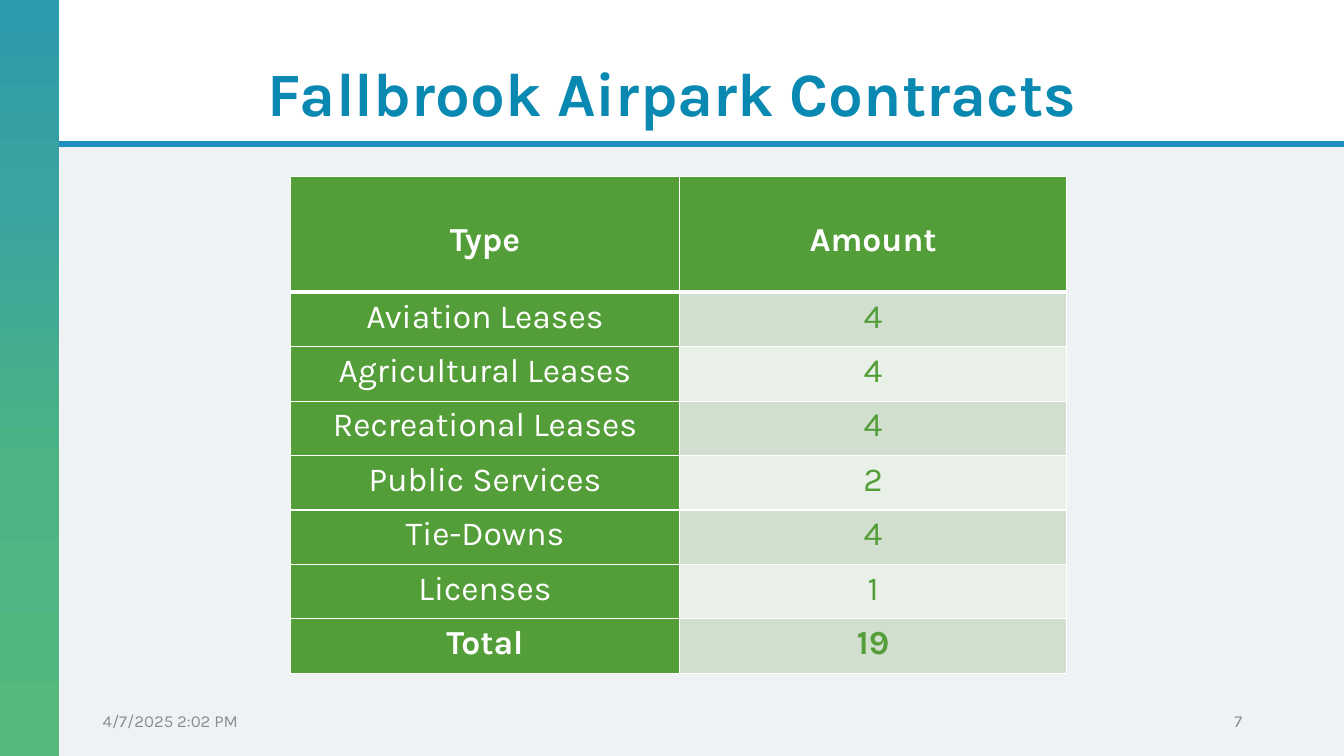
"""Build the Fallbrook Airpark Contracts slide."""
from copy import deepcopy
from typing import NamedTuple

from lxml import etree
from pptx import Presentation
from pptx import util as u
from pptx.dml.color import RGBColor
from pptx.enum import shapes, text
from pptx.oxml import ns

FONT = "Karla"
WHITE = RGBColor(0xFF, 0xFF, 0xFF)
PANEL = RGBColor(0xEF, 0xF2, 0xF5)
RULE = RGBColor(0x1D, 0x90, 0xBF)
TITLE = RGBColor(0x09, 0x89, 0xB1)
FOOTER = RGBColor(0x8C, 0x8C, 0x8C)
GREEN = RGBColor(0x54, 0x9E, 0x39)
BANDS = (RGBColor(0xD1, 0xDF, 0xCE), RGBColor(0xE9, 0xF0, 0xE8))
SIDEBAR_STOPS = (
    (0, RGBColor(0x2C, 0x9B, 0xAD)),
    (0.26, RGBColor(0x39, 0xA3, 0x9F)),
    (0.62, RGBColor(0x4D, 0xB3, 0x84)),
    (1, RGBColor(0x55, 0xB9, 0x7D)),
)


class Label(NamedTuple):
    """A line of text in its own box."""
    words: str
    left: float
    top: float
    width: float
    height: float
    size: int
    color: RGBColor
    align: text.PP_ALIGN
    bold: bool = False


class Contract(NamedTuple):
    """A table row: contract type and its amount."""
    kind: str
    amount: str
    bold: bool = False


LABELS = (
    Label("Fallbrook Airpark Contracts", 0.92, 0.4, 11.5, 1.03, 44, TITLE,
          text.PP_ALIGN.CENTER, True),
    Label("4/7/2025 2:02 PM", 0.92, 6.95, 3, 0.4, 12, FOOTER, text.PP_ALIGN.LEFT),
    Label("7", 9.42, 6.95, 3, 0.4, 12, FOOTER, text.PP_ALIGN.RIGHT),
)
CONTRACTS = (
    Contract("Type", "Amount", True),
    Contract("Aviation Leases", "4"),
    Contract("Agricultural Leases", "4"),
    Contract("Recreational Leases", "4"),
    Contract("Public Services", "2"),
    Contract("Tie-Downs", "4"),
    Contract("Licenses", "1"),
    Contract("Total", "19", True),
)


def write(frame, words: str, size: int, color: RGBColor, align: text.PP_ALIGN,
          bold: bool) -> None:
    """Put one formatted paragraph in a text frame."""
    frame.text = words
    paragraph = frame.paragraphs[0]
    paragraph.alignment = align
    font = paragraph.runs[0].font
    font.name, font.size, font.bold = FONT, u.Pt(size), bold
    font.color.rgb = color


def add_label(slide, label: Label) -> None:
    """Draw a label centred vertically in its box."""
    box = slide.shapes.add_textbox(u.Inches(label.left), u.Inches(label.top),
                                   u.Inches(label.width), u.Inches(label.height))
    frame = box.text_frame
    frame.word_wrap = True
    frame.vertical_anchor = text.MSO_ANCHOR.MIDDLE
    write(frame, label.words, label.size, label.color, label.align, label.bold)


def add_block(slide, left: float, top: float, width: float, height: float):
    """Draw a plain rectangle without outline and return it."""
    block = slide.shapes.add_shape(shapes.MSO_SHAPE.RECTANGLE, u.Inches(left),
                                   u.Inches(top), u.Inches(width), u.Inches(height))
    block.shadow.inherit = False
    block.line.fill.background()
    return block


def add_backdrop(slide) -> None:
    """Draw the panel, the gradient sidebar and the rule under the title."""
    panel = add_block(slide, 0.59, 1.43, 12.74, 6.07)
    panel.fill.solid()
    panel.fill.fore_color.rgb = PANEL

    rule = slide.shapes.add_connector(shapes.MSO_CONNECTOR.STRAIGHT, u.Inches(0.58),
                                      u.Inches(1.43), u.Inches(13.33), u.Inches(1.43))
    rule.line.color.rgb = RULE
    rule.line.width = u.Pt(4)
    etree.SubElement(rule._element.spPr, ns.qn("a:effectLst"))

    sidebar = add_block(slide, 0, 0, 0.59, 7.5)
    sidebar.fill.gradient()
    sidebar.fill.gradient_angle = 270
    stop_list = sidebar._element.spPr.find(".//" + ns.qn("a:gsLst"))
    while len(stop_list) < len(SIDEBAR_STOPS):
        stop_list.append(deepcopy(stop_list[0]))
    for stop, (position, color) in zip(sidebar.fill.gradient_stops, SIDEBAR_STOPS):
        stop.position = position
        stop.color.rgb = color


def set_borders(cell, top: int, bottom: int) -> None:
    """Give a cell white borders, one point wide at the sides."""
    properties = cell._tc.get_or_add_tcPr()
    widths = {"lnL": 1, "lnR": 1, "lnT": top, "lnB": bottom}
    for index, (side, width) in enumerate(widths.items()):
        line = etree.Element(ns.qn(f"a:{side}"), w=str(u.Pt(width)))
        fill = etree.SubElement(line, ns.qn("a:solidFill"))
        etree.SubElement(fill, ns.qn("a:srgbClr"), val=str(WHITE))
        properties.insert(index, line)


def add_contracts(slide) -> None:
    """Draw the table of contract types and amounts."""
    table = slide.shapes.add_table(len(CONTRACTS), 2, u.Inches(2.88), u.Inches(1.75),
                                   u.Inches(7.7), u.Inches(4.93)).table
    for column, width in zip(table.columns, (3.86, 3.84)):
        column.width = u.Inches(width)
    for row, contract in enumerate(CONTRACTS):
        header = row == 0
        table.rows[row].height = u.Inches(1.15 if header else 0.54)
        for column, words in enumerate((contract.kind, contract.amount)):
            cell = table.cell(row, column)
            solid = header or column == 0
            cell.fill.solid()
            cell.fill.fore_color.rgb = GREEN if solid else BANDS[(row - 1) % 2]
            set_borders(cell, 3 if row == 1 else 1, 3 if header else 1)
            if header:
                cell.margin_top = u.Inches(0.44)
            write(cell.text_frame, words, 24, WHITE if solid else GREEN,
                  text.PP_ALIGN.CENTER, contract.bold)


def main() -> None:
    """Assemble and save the slide."""
    deck = Presentation()
    deck.slide_width, deck.slide_height = u.Inches(13.33), u.Inches(7.5)
    slide = deck.slides.add_slide(deck.slide_layouts[6])
    add_backdrop(slide)
    add_contracts(slide)
    for label in LABELS:
        add_label(slide, label)
    deck.save("out.pptx")


if __name__ == "__main__":
    main()
